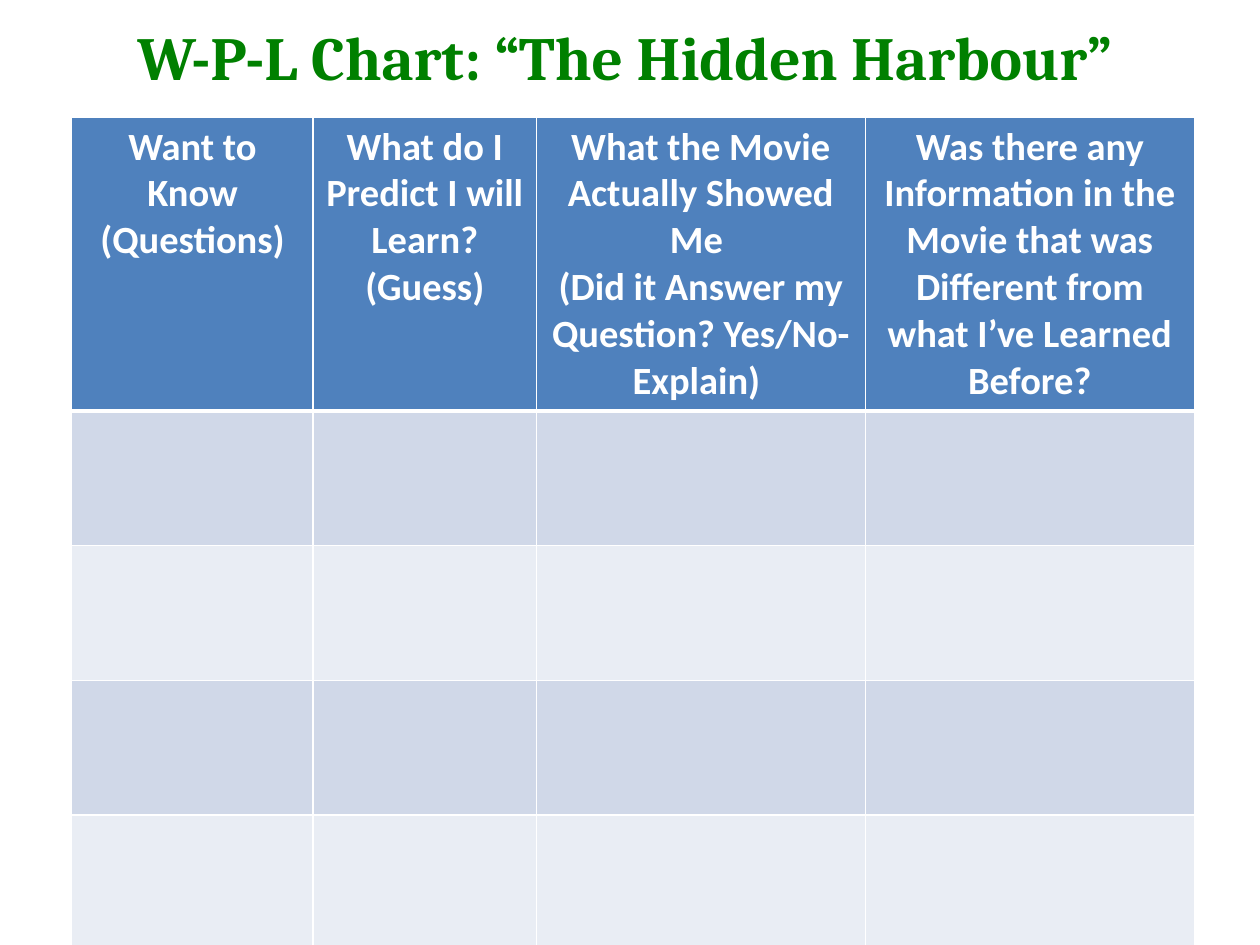
from pptx import Presentation
from pptx.dml.color import RGBColor
from pptx.enum.text import MSO_ANCHOR, PP_ALIGN
from pptx.util import Pt
from lxml.etree import SubElement
from pptx.oxml.ns import qn

WHITE, GREEN, BLUE = "FFFFFF", "008000", "4F81BD"
BANDS = ("D0D8E8", "E9EDF4")
HEADINGS = (
    "Want to Know (Questions)",
    "What do I Predict I will Learn? (Guess)",
    "What the Movie Actually Showed Me \v(Did it Answer my Question? Yes/No- Explain) ",
    "Was there any Information in the Movie that was Different from what I’ve Learned Before?",
)
COL_WIDTHS = (138, 127.5, 188, 188)
HEADER_HEIGHT, ROW_HEIGHT, ROW_COUNT = 163, 77, 4


def color(hex_text):
    return RGBColor.from_string(hex_text)


def write(tf, text, font, size, hex_text):
    """Put one bold, centred paragraph in a text frame."""
    tf.text = text
    p = tf.paragraphs[0]
    p.alignment = PP_ALIGN.CENTER
    for r in p.runs:
        for name, value in dict(name=font, size=Pt(size), bold=True).items():
            setattr(r.font, name, value)
        r.font.color.rgb = color(hex_text)


def style_cell(cell, fill, bottom=1, top=1):
    """Give a cell white borders, widths in points, and a solid fill."""
    tc_pr = cell._tc.get_or_add_tcPr()
    for side, width in dict(lnL=1, lnR=1, lnT=top, lnB=bottom).items():
        ln = SubElement(tc_pr, qn(f"a:{side}"), w=str(Pt(width)))
        SubElement(SubElement(ln, qn("a:solidFill")), qn("a:srgbClr"), val=WHITE)
    cell.fill.solid()
    cell.fill.fore_color.rgb = color(fill)


def add_title(slide, text, left, top, width, height):
    sp = slide.shapes.title
    box = dict(left=left, top=top, width=width, height=height)
    for name, value in box.items():
        setattr(sp, name, Pt(value))
    tf = sp.text_frame
    tf.word_wrap = True
    tf.vertical_anchor = MSO_ANCHOR.MIDDLE
    write(tf, text, "Cambria", 35, GREEN)


def add_wpl_table(slide, left, top):
    height = HEADER_HEIGHT + ROW_COUNT * ROW_HEIGHT
    table = slide.shapes.add_table(
        ROW_COUNT + 1, len(HEADINGS),
        Pt(left), Pt(top), Pt(sum(COL_WIDTHS)), Pt(height)).table
    for column, width in zip(table.columns, COL_WIDTHS):
        column.width = Pt(width)
    for i, row in enumerate(table.rows):
        row.height = Pt(ROW_HEIGHT if i else HEADER_HEIGHT)
        for cell, heading in zip(row.cells, HEADINGS):
            if i == 0:
                style_cell(cell, BLUE, bottom=3)
                write(cell.text_frame, heading, "Calibri", 22, WHITE)
            else:
                style_cell(cell, BANDS[(i - 1) % 2], top=3 if i == 1 else 1)


def main():
    prs = Presentation()
    prs.slide_width, prs.slide_height = Pt(720), Pt(540)
    slide = prs.slides.add_slide(prs.slide_layouts[5])
    add_title(slide, "W-P-L Chart: “The Hidden Harbour”", 30, 7.5, 654.5, 49.5)
    add_wpl_table(slide, 41, 67)
    prs.save("out.pptx")


if __name__ == "__main__":
    main()
